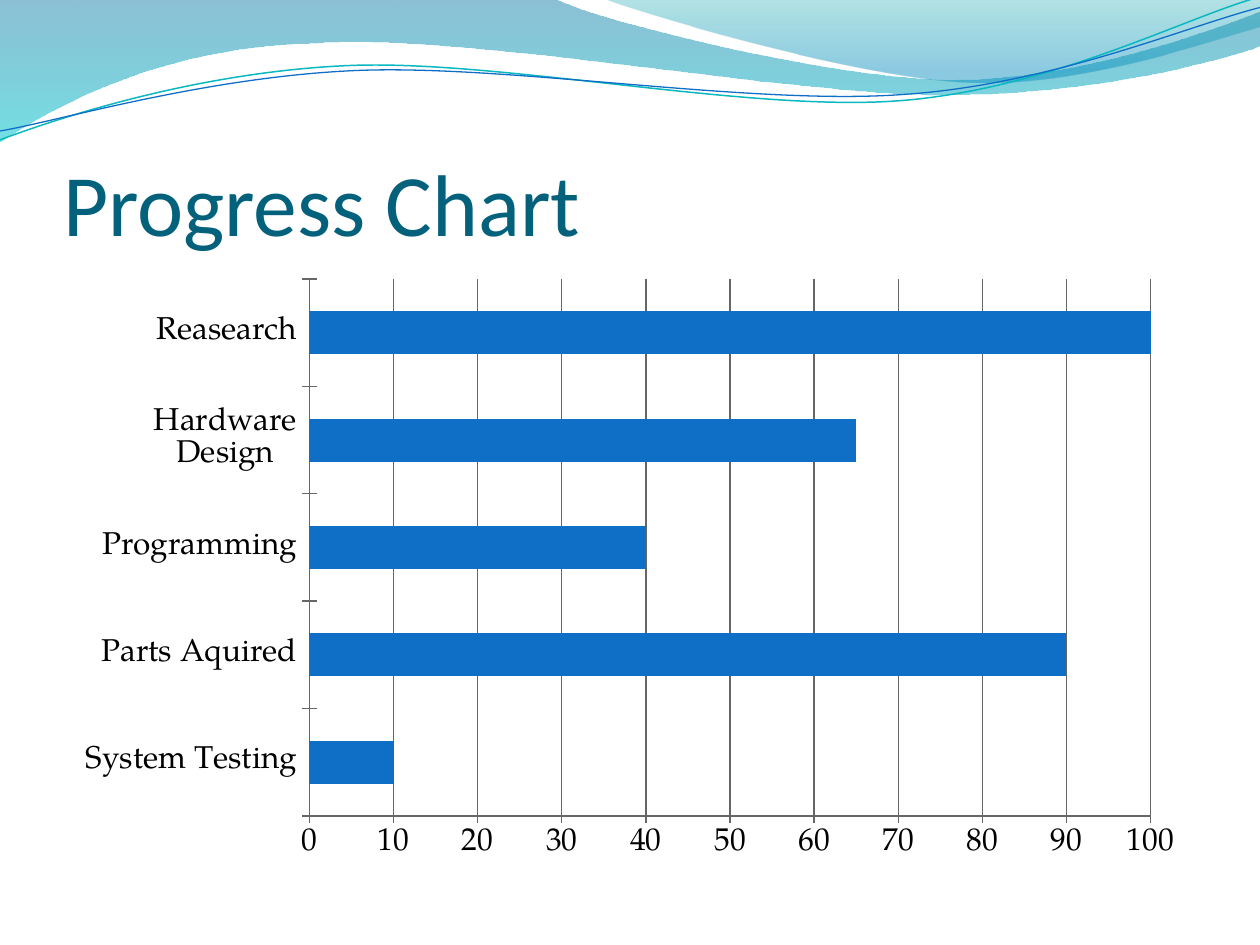
import math

from lxml import etree
from pptx import Presentation
from pptx import util as u
from pptx.chart import data as chart_data
from pptx.dml.color import RGBColor
from pptx.enum import chart as charts, text
from pptx.oxml.ns import qn

COLUMNS, ROWS = 10, 7.5
TILT = 357.3
OCEAN = RGBColor(0x00, 0x74, 0xA1)
AQUA = RGBColor(0x00, 0xC6, 0xCF)
LAGOON = RGBColor(0x00, 0xA1, 0xA9)
SKY = RGBColor(0x00, 0x8B, 0xBF)
TEAL = RGBColor(0x0A, 0xB8, 0xBF)
BLUE = RGBColor(0x0F, 0x6F, 0xC6)
TITLE_COLOR = RGBColor(0x04, 0x61, 0x7B)
BLACK = RGBColor(0x00, 0x00, 0x00)
GRAY = RGBColor(0x66, 0x66, 0x66)
TITLE_FONT = "Calibri"
BODY_FONT = "TeX Gyre Pagella"


def format_font(font, name, size, color):
    font.name, font.size, font.color.rgb = name, u.Pt(size), color


def write(frame, words, align=text.PP_ALIGN.LEFT, **style):
    para = frame.paragraphs[0]
    para.alignment = align
    span = para.add_run()
    span.text = words
    format_font(span.font, **style)


def level(steps, center):
    cos, sin = math.cos(math.radians(-TILT)), math.sin(math.radians(-TILT))
    across, down = center

    def turn(x, y):
        return (across + (x - across) * cos - (y - down) * sin,
                down + (x - across) * sin + (y - down) * cos)

    return [sum((turn(*step[i:i + 2]) for i in range(0, len(step), 2)), ()) for step in steps]


class SlideBuilder:
    """Builds one slide on a grid of columns and rows."""

    def __init__(self, deck):
        self.page = deck.slides.add_slide(deck.slide_layouts[5])
        self.column = deck.slide_width / COLUMNS
        self.row = deck.slide_height / ROWS

    def place(self, left, top, width, height):
        return (round(left * self.column), round(top * self.row),
                round(width * self.column), round(height * self.row))

    def outline(self, steps, close):
        spots = [(round(step[i] * self.column), round(step[i + 1] * self.row))
                 for step in steps for i in range(0, len(step), 2)]
        builder = self.page.shapes.build_freeform(*spots[0])
        builder.add_line_segments(spots[1:], close=close)
        shape = builder.convert_to_shape()
        shape.shadow.inherit = False
        segments = iter(list(shape.element.iter(qn("a:lnTo"))))
        for step in steps[1:]:
            parts = [next(segments) for _ in range(len(step) // 2)]
            if len(parts) == 3:
                curve = etree.Element(qn("a:cubicBezTo"))
                parts[0].addprevious(curve)
                for part in parts:
                    curve.append(part[0])
                    part.getparent().remove(part)
        return shape

    def wave(self, steps, stops):
        shape = self.outline(steps, True)
        shape.line.fill.background()
        shape.fill.gradient()
        shape.fill.gradient_angle = 270
        for stop, (position, color, _) in zip(shape.fill.gradient_stops, stops):
            stop.position, stop.color.rgb = position, color
        tints = shape.element.spPr.iter(qn("a:srgbClr"))
        for tint, (_, _, opacity) in zip(tints, stops):
            etree.SubElement(tint, qn("a:alpha")).set("val", str(opacity * 1000))

    def ripple(self, steps, center, color, width):
        shape = self.outline(level(steps, center), False)
        shape.rotation = TILT
        shape.fill.background()
        shape.line.color.rgb, shape.line.width = color, u.Pt(width)

    def title(self, words, *area):
        box = self.page.shapes.title
        box.left, box.top, box.width, box.height = self.place(*area)
        box.element.getparent().append(box.element)
        frame = box.text_frame
        frame.vertical_anchor = text.MSO_ANCHOR.BOTTOM
        frame.margin_left = frame.margin_right = frame.margin_bottom = 0
        write(frame, words, name=TITLE_FONT, size=50, color=TITLE_COLOR)

    def bar_chart(self, values, *area):
        source = chart_data.CategoryChartData()
        source.categories = list(values)
        source.add_series("Series 1", list(values.values()))
        chart = self.page.shapes.add_chart(
            charts.XL_CHART_TYPE.BAR_CLUSTERED, *self.place(*area), source).chart
        chart.has_legend = chart.has_title = False
        format_font(chart.font, BODY_FONT, 18, BLACK)
        plot = chart.plots[0]
        plot.gap_width, plot.vary_by_categories = 150, False
        fill = plot.series[0].format.fill
        fill.solid()
        fill.fore_color.rgb = BLUE
        scale = chart.value_axis
        scale.minimum_scale, scale.maximum_scale, scale.major_unit = 0, 100, 10
        scale.has_major_gridlines = True
        chart.category_axis.has_major_gridlines = False
        for axis in (scale, chart.category_axis):
            axis.major_tick_mark = charts.XL_TICK_MARK.CROSS
            axis.minor_tick_mark = charts.XL_TICK_MARK.NONE
        for part in (scale, chart.category_axis, scale.major_gridlines):
            part.format.line.color.rgb = GRAY
            part.format.line.width = u.Pt(0.75)


def main():
    deck = Presentation()
    deck.slide_width, deck.slide_height = u.Inches(COLUMNS), u.Inches(ROWS)
    slide = SlideBuilder(deck)
    slide.wave([(0, 0), (4.4, -0.01), (4.76, 0.17, 6.64, 0.63, 7.58, 0.63),
                (8.53, 0.63, 9.58, 0.26, 10, 0.09), (10.01, 0.36),
                (9.83, 0.44, 8.7, 0.76, 7.46, 0.75),
                (6.22, 0.75, 3.82, 0.28, 2.57, 0.34),
                (1.29, 0.36, 0.46, 0.83, -0.01, 1.13), (0, 0)],
               [(0, OCEAN, 45), (1, AQUA, 55)])
    slide.wave([(4.79, -0.01), (5.09, 0.11, 6.82, 0.62, 7.69, 0.65),
                (8.56, 0.69, 9.61, 0.32, 10, 0.21), (10, 0), (4.79, -0.01)],
               [(0, LAGOON, 30), (0.8, SKY, 45)])
    slide.ripple([(0, 1.11), (0.48, 0.93, 1.58, 0.57, 2.77, 0.52),
                  (3.95, 0.47, 5.93, 0.89, 7.13, 0.8),
                  (8.33, 0.71, 9.38, 0.15, 9.98, -0.02)], (4.99, 0.58), TEAL, 0.85)
    slide.ripple([(0, 1.04), (0.47, 0.96, 1.64, 0.61, 2.83, 0.56),
                  (4.03, 0.51, 5.97, 0.84, 7.17, 0.75),
                  (8.36, 0.67, 9.41, 0.21, 10, 0.06)], (5, 0.59), BLUE, 0.75)
    slide.title("Progress Chart", 0.5, 0.77, 9, 1.25)
    slide.bar_chart({"System Testing": 10, "Parts Aquired": 90, "Programming": 40,
                     "Hardware Design": 65, "Reasearch": 100}, 0.5, 2.12, 9, 4.8)
    deck.save("out.pptx")


if __name__ == "__main__":
    main()
